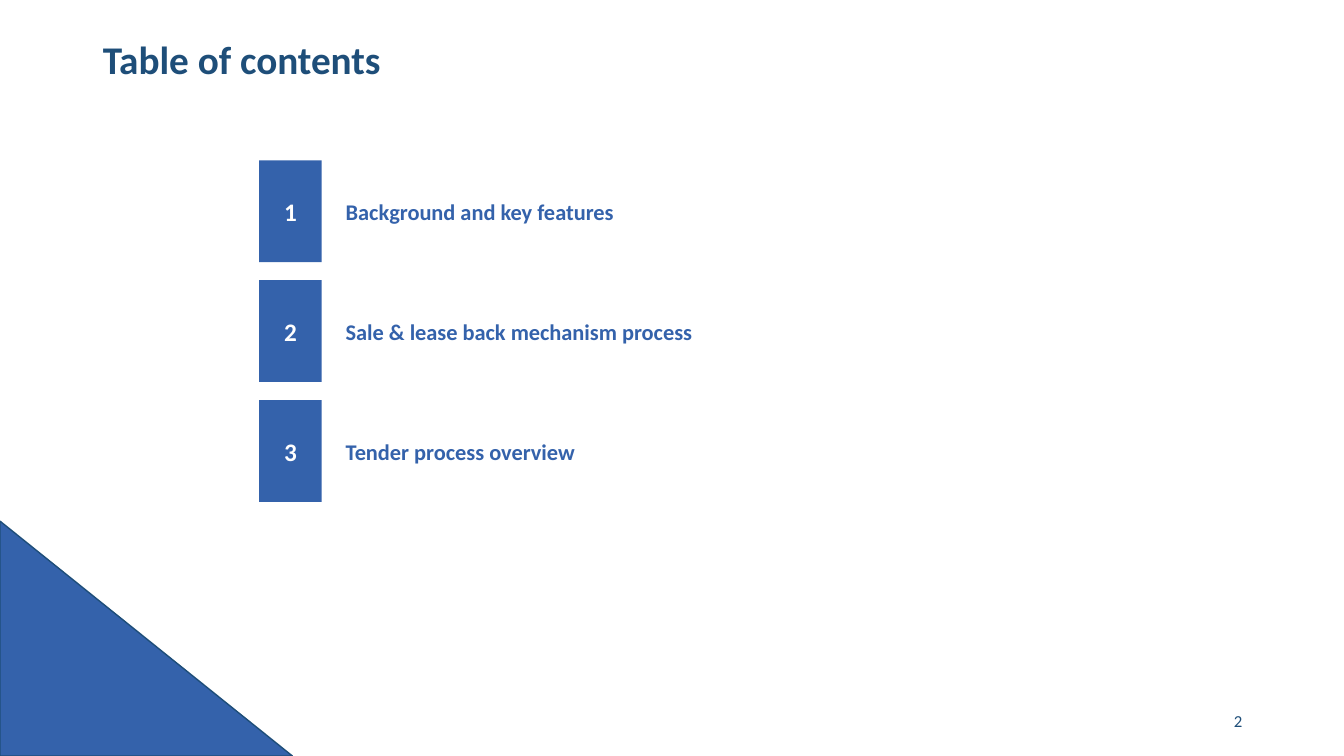
"""Build the table of contents slide."""
import dataclasses

import pptx
import pptx.dml.color
import pptx.enum.shapes
import pptx.enum.text
import pptx.util

TITLE = "Table of contents"
SECTIONS = [
    "Background and key features",
    "Sale & lease back mechanism process",
    "Tender process overview",
]
PAGE_NUMBER = "2"

Inches = pptx.util.Inches
Shapes = pptx.enum.shapes.MSO_SHAPE
Align = pptx.enum.text.PP_ALIGN


@dataclasses.dataclass(frozen=True)
class Theme:
    font: str = "Calibri"
    blue: str = "3462AB"
    navy: str = "1E4E79"
    white: str = "FFFFFF"
    title_size: int = 28
    number_size: int = 18
    section_size: int = 16
    page_size: int = 12


THEME = Theme()
FIRST_TOP, ROW_PITCH, ROW_HEIGHT = 1.59, 1.19, 1.01
NUMBER_LEFT, NUMBER_WIDTH = 2.57, 0.62
SECTION_LEFT, SECTION_WIDTH = 3.33, 8.32


def rgb(color):
    return pptx.dml.color.RGBColor.from_string(color)


def write(shape, text, size, color, bold=True, align=Align.LEFT):
    frame = shape.text_frame
    frame.word_wrap = True
    frame.auto_size = pptx.enum.text.MSO_AUTO_SIZE.NONE
    frame.vertical_anchor = pptx.enum.text.MSO_ANCHOR.MIDDLE
    paragraph = frame.paragraphs[0]
    paragraph.alignment = align
    run = paragraph.add_run()
    run.text = text
    run.font.name = THEME.font
    run.font.size = pptx.util.Pt(size)
    run.font.bold = bold
    run.font.color.rgb = rgb(color)
    return paragraph


def add_block(slide, preset, box, outline=None):
    block = slide.shapes.add_shape(preset, *map(Inches, box))
    block.shadow.inherit = False
    block.fill.solid()
    block.fill.fore_color.rgb = rgb(THEME.blue)
    if outline:
        block.line.color.rgb = rgb(outline)
        block.line.width = pptx.util.Pt(1)
    else:
        block.line.fill.background()
    return block


def add_label(slide, box):
    return slide.shapes.add_textbox(*map(Inches, box))


def main():
    deck = pptx.Presentation()
    deck.slide_width, deck.slide_height = Inches(13.33), Inches(7.5)
    slide = deck.slides.add_slide(deck.slide_layouts[5])

    add_block(slide, Shapes.RIGHT_TRIANGLE, (0, 5.17, 2.9, 2.33), THEME.navy)

    title = slide.shapes.title
    title.left, title.top, title.width, title.height = map(Inches, (0.92, 0.21, 11.5, 0.81))
    write(title, TITLE, THEME.title_size, THEME.navy).line_spacing = 0.9

    page = add_label(slide, (9.42, 6.95, 3, 0.4))
    write(page, PAGE_NUMBER, THEME.page_size, THEME.navy, bold=False, align=Align.RIGHT)

    for index, section in enumerate(SECTIONS):
        top = FIRST_TOP + index * ROW_PITCH
        number = add_block(slide, Shapes.RECTANGLE, (NUMBER_LEFT, top, NUMBER_WIDTH, ROW_HEIGHT))
        write(number, str(index + 1), THEME.number_size, THEME.white, align=Align.CENTER)
        label = add_label(slide, (SECTION_LEFT, top, SECTION_WIDTH, ROW_HEIGHT))
        write(label, section, THEME.section_size, THEME.blue)

    deck.save("out.pptx")


if __name__ == "__main__":
    main()
